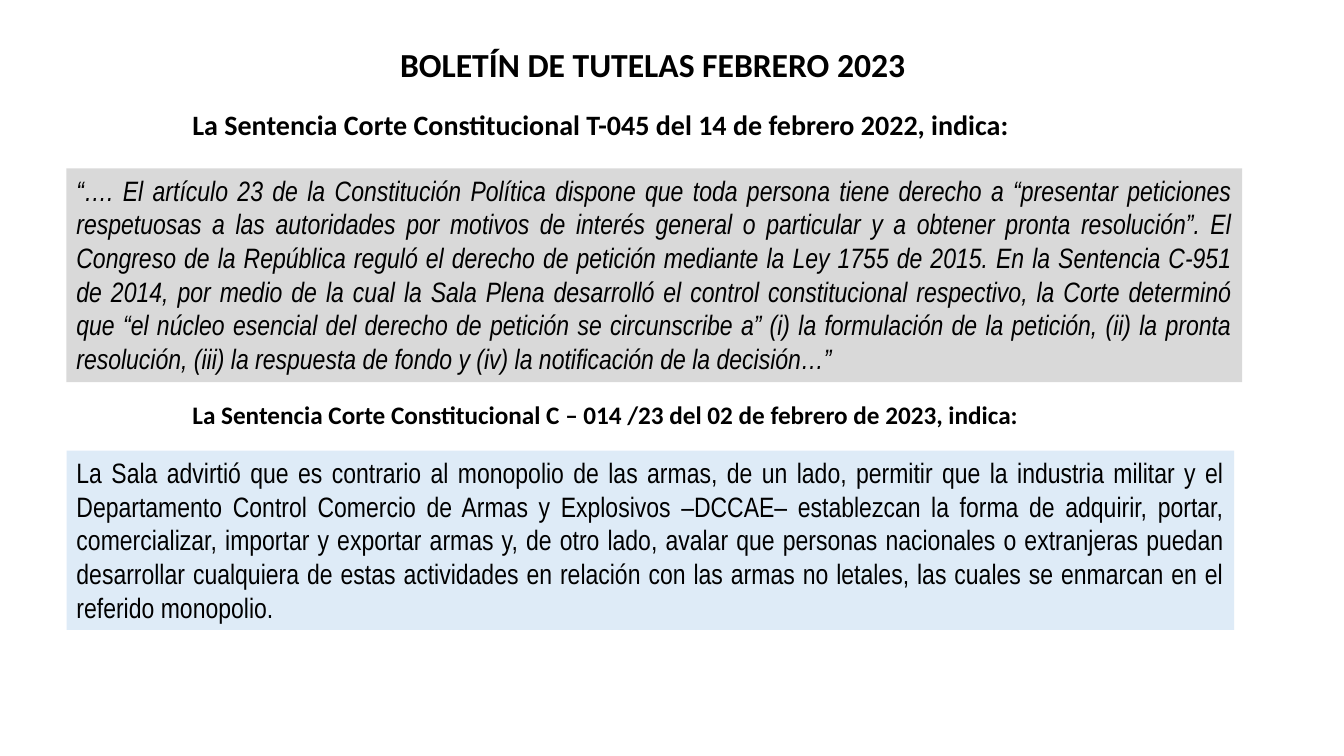
from pptx import Presentation
from pptx.dml.color import RGBColor
from pptx.enum.shapes import MSO_SHAPE
from pptx.enum.text import MSO_ANCHOR, MSO_AUTO_SIZE, PP_ALIGN
from pptx.util import Inches, Pt

BLACK = RGBColor(0x00, 0x00, 0x00)
GRAY = RGBColor(0xD9, 0xD9, 0xD9)
PALE_BLUE = RGBColor(0xDE, 0xEB, 0xF7)

PETITION_RULING = (
    "“…. El artículo 23 de la Constitución Política dispone que toda persona tiene derecho a "
    "“presentar peticiones respetuosas a las autoridades por motivos de interés general o "
    "particular y a obtener pronta resolución”. El Congreso de la República reguló el derecho de "
    "petición mediante la Ley 1755 de 2015. En la Sentencia C-951 de 2014, por medio de la cual la "
    "Sala Plena desarrolló el control constitucional respectivo, la Corte determinó que “el núcleo "
    "esencial del derecho de petición se circunscribe a” (i) la formulación de la petición, (ii) la "
    "pronta resolución, (iii) la respuesta de fondo y (iv) la notificación de la decisión…”"
)
WEAPONS_RULING = (
    "La Sala advirtió que es contrario al monopolio de las armas, de un lado, permitir que la "
    "industria militar y el Departamento Control Comercio de Armas y Explosivos –DCCAE– "
    "establezcan la forma de adquirir, portar, comercializar, importar y exportar armas y, de otro "
    "lado, avalar que personas nacionales o extranjeras puedan desarrollar cualquiera de estas "
    "actividades en relación con las armas no letales, las cuales se enmarcan en el referido "
    "monopolio."
)


def write_text(shape, text, font_name, size, bold=False, italic=False, wrap=True):
    """Fill a shape with one paragraph and return that paragraph."""
    frame = shape.text_frame
    frame.word_wrap = wrap
    frame.auto_size = MSO_AUTO_SIZE.SHAPE_TO_FIT_TEXT
    frame.vertical_anchor = MSO_ANCHOR.TOP
    paragraph = frame.paragraphs[0]
    paragraph.text = text
    paragraph.alignment = PP_ALIGN.LEFT
    font = paragraph.font
    font.name = font_name
    font.size = Pt(size)
    font.bold = bold
    font.italic = italic
    font.color.rgb = BLACK
    return paragraph


def add_heading(slide, text, left, top, width, height, size, wrap=True):
    """Add a bold heading in a text box."""
    box = slide.shapes.add_textbox(Inches(left), Inches(top), Inches(width), Inches(height))
    write_text(box, text, "Calibri", size, bold=True, wrap=wrap)


def add_ruling(slide, text, top, width, height, color, italic=False):
    """Add a justified ruling on a filled panel."""
    panel = slide.shapes.add_shape(
        MSO_SHAPE.RECTANGLE, Inches(0.66), Inches(top), Inches(width), Inches(height)
    )
    panel.shadow.inherit = False
    panel.fill.solid()
    panel.fill.fore_color.rgb = color
    panel.line.fill.background()
    paragraph = write_text(panel, text, "Arial Narrow", 20, italic=italic)
    paragraph.alignment = PP_ALIGN.JUSTIFY


def main():
    """Build and save the slide."""
    presentation = Presentation()
    presentation.slide_width = Inches(13.33)
    presentation.slide_height = Inches(7.5)
    slide = presentation.slides.add_slide(presentation.slide_layouts[6])

    add_heading(slide, "BOLETÍN DE TUTELAS FEBRERO 2023", 3.87, 0.39, 5.26, 0.5, 24, wrap=False)
    add_heading(
        slide,
        "La Sentencia Corte Constitucional T-045 del 14 de febrero 2022, indica:",
        1.81, 1.02, 10.06, 0.44, 20,
    )
    add_ruling(slide, PETITION_RULING, 1.67, 11.66, 2.12, GRAY, italic=True)
    add_ruling(slide, WEAPONS_RULING, 4.47, 11.58, 1.78, PALE_BLUE)
    add_heading(
        slide,
        "La Sentencia Corte Constitucional C – 014 /23 del 02 de febrero de 2023, indica:",
        1.81, 3.91, 10.38, 0.4, 18,
    )

    presentation.save("out.pptx")


if __name__ == "__main__":
    main()
